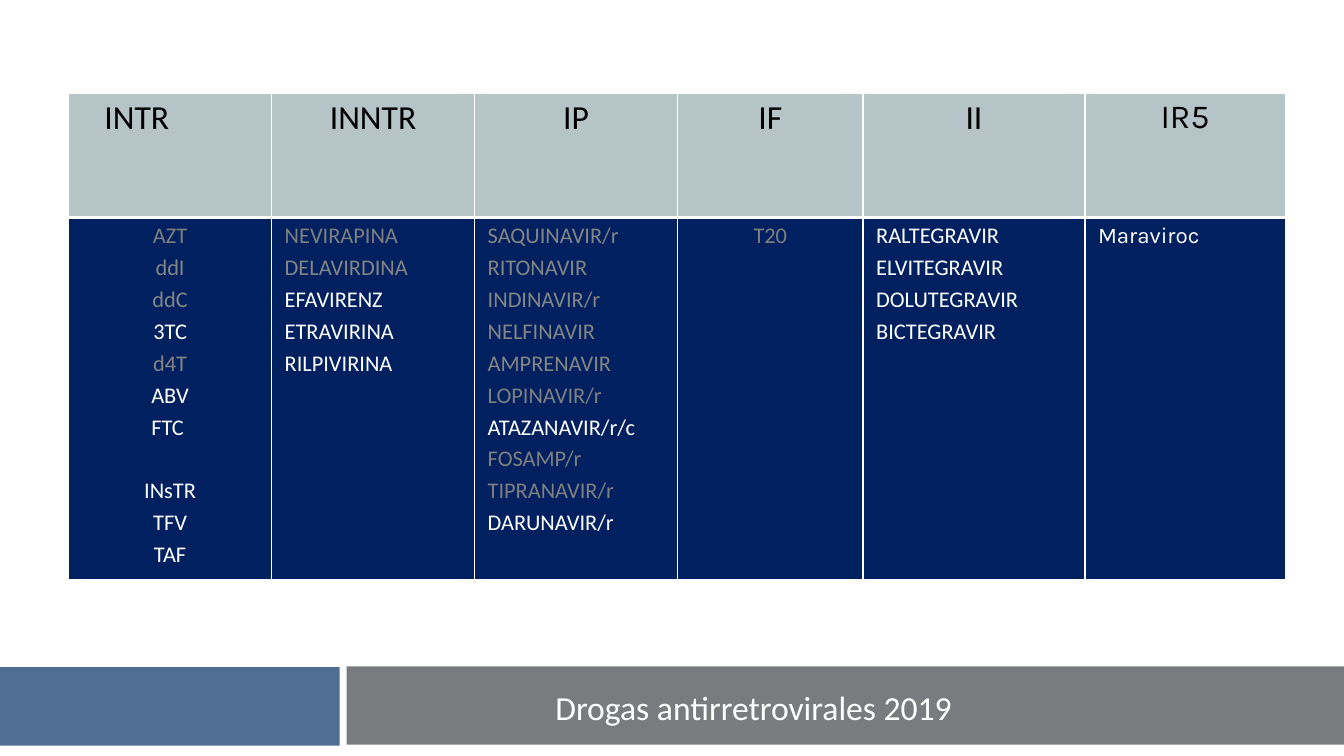
from pptx import Presentation
from pptx.dml.color import RGBColor
from pptx.enum.shapes import MSO_SHAPE as Shape
from pptx.enum.text import MSO_ANCHOR as Anchor, MSO_AUTO_SIZE as AutoSize, PP_ALIGN as Align
from pptx.oxml import parse_xml
from pptx.oxml.ns import nsdecls
from pptx.util import Pt

WHITE = RGBColor(0xFF, 0xFF, 0xFF)
BLACK = RGBColor(0, 0, 0)
NAVY = RGBColor(0x00, 0x20, 0x60)
SAGE = RGBColor(0xB5, 0xC4, 0xC7)
BLUE = RGBColor(0x50, 0x6E, 0x94)
SLATE = RGBColor(0x79, 0x7B, 0x7E)
GREY = RGBColor(0x80, 0x80, 0x80)
PALE_GREY = RGBColor(0x85, 0x85, 0x84)

# heading, column width, alignment, font, drugs
CLASSES = [
    ("INTR", 145, Align.CENTER, "Calibri",
     ["AZT", "ddI", "ddC", "3TC", "d4T", "ABV", "FTC ", "INsTR", "TFV", "TAF"]),
    ("INNTR", 145, Align.LEFT, "Calibri",
     ["NEVIRAPINA", "DELAVIRDINA", "EFAVIRENZ", "ETRAVIRINA", "RILPIVIRINA"]),
    ("IP", 145, Align.LEFT, "Calibri",
     ["SAQUINAVIR/r", "RITONAVIR", "INDINAVIR/r", "NELFINAVIR", "AMPRENAVIR",
      "LOPINAVIR/r", "ATAZANAVIR/r/c", "FOSAMP/r", "TIPRANAVIR/r", "DARUNAVIR/r"]),
    ("IF", 132.5, Align.CENTER, "Calibri", ["T20"]),
    ("II", 158.5, Align.LEFT, "Calibri",
     ["RALTEGRAVIR", "ELVITEGRAVIR", "DOLUTEGRAVIR", "BICTEGRAVIR"]),
    ("IR5", 143, Align.LEFT, "Karla", ["Maraviroc"]),
]
DRUG_COLORS = {
    **dict.fromkeys(["AZT", "NEVIRAPINA", "LOPINAVIR/r", "FOSAMP/r",
                     "TIPRANAVIR/r", "T20"], GREY),
    **dict.fromkeys(["ddI", "ddC", "d4T", "DELAVIRDINA", "SAQUINAVIR/r", "RITONAVIR",
                     "INDINAVIR/r", "NELFINAVIR", "AMPRENAVIR"], PALE_GREY),
}
HEADER_HEIGHT, BODY_HEIGHT = 89, 259
LINE_GAP, GROUP_GAP = 3.2, 25.9


class SlideBuilder:
    def __init__(self, prs):
        self.s = prs.slides.add_slide(prs.slide_layouts[5])

    def font(self, p, size, color, name="Calibri"):
        p.font.size, p.font.name = Pt(size), name
        p.font.color.rgb = color

    def bar(self, x, y, w, h, color):
        sp = self.s.shapes.add_shape(Shape.RECTANGLE, Pt(x), Pt(y), Pt(w), Pt(h))
        sp.shadow.inherit = False
        sp.fill.solid()
        sp.fill.fore_color.rgb = color
        sp.line.fill.background()

    def title(self, text, x, y, w, h):
        """Fill the title placeholder and bring it in front of the bars."""
        sp = self.s.shapes.title
        sp.left, sp.top, sp.width, sp.height = Pt(x), Pt(y), Pt(w), Pt(h)
        tf = sp.text_frame
        tf.text = text
        tf.word_wrap = False
        tf.auto_size = AutoSize.SHAPE_TO_FIT_TEXT
        tf.vertical_anchor = Anchor.TOP
        p = tf.paragraphs[0]
        p.alignment = Align.LEFT
        self.font(p, 24, WHITE)
        sp.element.getparent().append(sp.element)

    def borders(self, cell, top, bottom):
        tcPr = cell._tc.get_or_add_tcPr()
        for i, (side, width) in enumerate(zip("LRTB", (1, 1, top, bottom))):
            tcPr.insert(i, parse_xml(
                f'<a:ln{side} {nsdecls("a")} w="{Pt(width)}"><a:solidFill>'
                f'<a:srgbClr val="{WHITE}"/></a:solidFill></a:ln{side}>'))

    def cell(self, cell, fill, top, bottom):
        cell.fill.solid()
        cell.fill.fore_color.rgb = fill
        cell.margin_left = cell.margin_right = Pt(9.4)
        cell.margin_top = cell.margin_bottom = Pt(3.6)
        self.borders(cell, top, bottom)
        return cell.text_frame

    def drug_table(self, x, y):
        width = sum(c[1] for c in CLASSES)
        table = self.s.shapes.add_table(2, len(CLASSES), Pt(x), Pt(y), Pt(width),
                                        Pt(HEADER_HEIGHT + BODY_HEIGHT)).table
        table.first_row = table.horz_banding = False
        table.rows[0].height, table.rows[1].height = Pt(HEADER_HEIGHT), Pt(BODY_HEIGHT)
        for col, (heading, w, align, name, drugs) in enumerate(CLASSES):
            table.columns[col].width = Pt(w)
            p = self.cell(table.cell(0, col), SAGE, 1, 3).paragraphs[0]
            p.text = heading
            p.alignment = Align.CENTER if col else Align.LEFT
            self.font(p, 24, BLACK, name)
            tf = self.cell(table.cell(1, col), NAVY, 3, 1)
            for i, drug in enumerate(drugs):
                p = tf.add_paragraph() if i else tf.paragraphs[0]
                p.text = drug
                p.alignment = align
                if i:
                    p.space_before = Pt(GROUP_GAP if drug == "INsTR" else LINE_GAP)
                self.font(p, 16, DRUG_COLORS.get(drug, WHITE), name)
        table.cell(0, 0).margin_left = Pt(25.6)


def main():
    prs = Presentation()
    prs.slide_width, prs.slide_height = Pt(960), Pt(540)
    b = SlideBuilder(prs)
    b.bar(247.7, 476, 712.3, 56, SLATE)
    b.bar(0, 476.6, 242.6, 56, BLUE)
    b.drug_table(49, 66.4)
    b.title("Drogas antirretrovirales 2019", 389.5, 486.7, 300, 36)
    prs.save("out.pptx")


if __name__ == "__main__":
    main()
